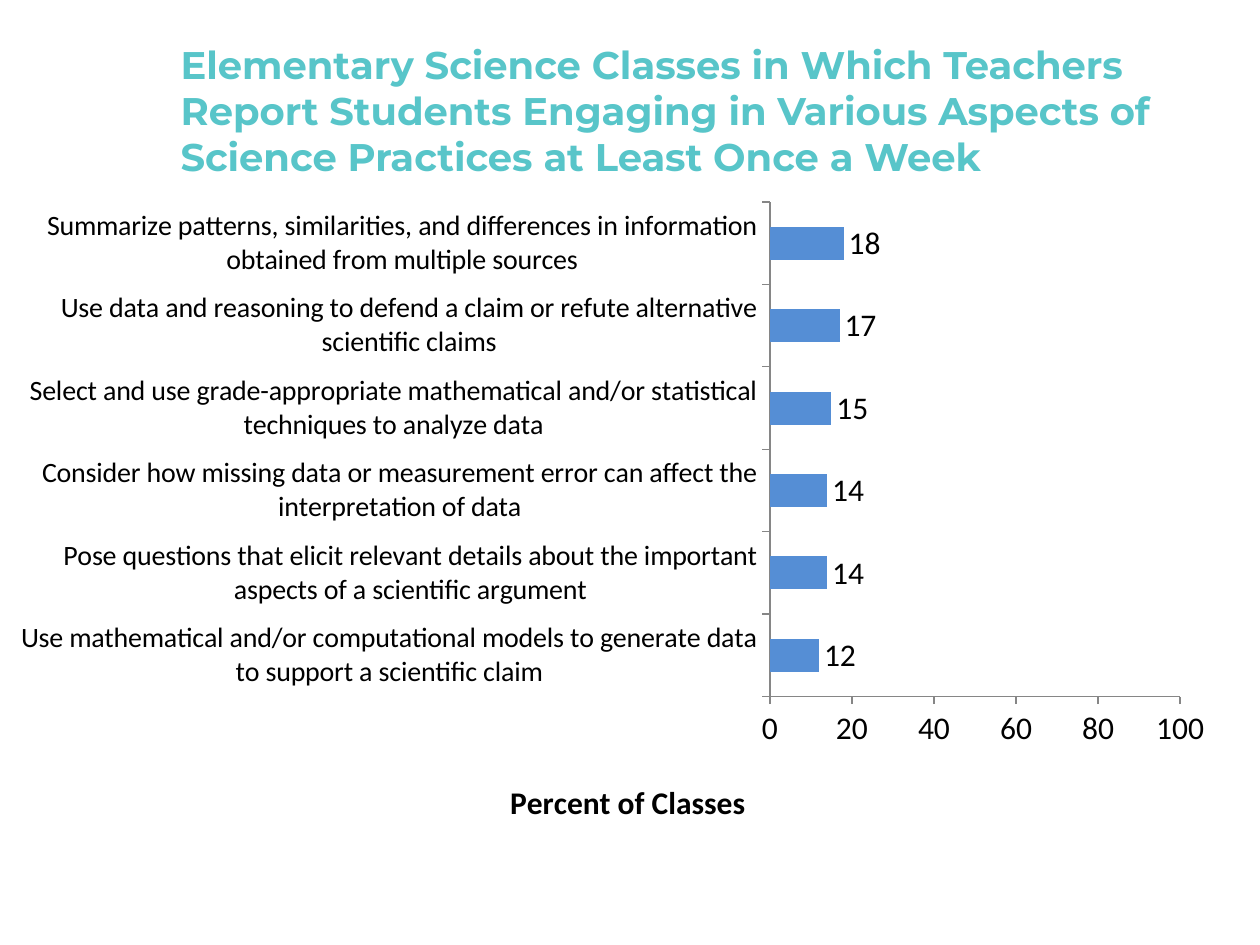
from dataclasses import dataclass

from lxml.etree import SubElement as Sub
from pptx import Presentation as Deck
from pptx.chart.data import CategoryChartData as Data
from pptx.dml.color import RGBColor as Color
from pptx.enum.chart import XL_CHART_TYPE as Kind
from pptx.enum.chart import XL_LABEL_POSITION as Spot
from pptx.enum.chart import XL_TICK_MARK as Tick
from pptx.enum.text import MSO_ANCHOR as Anchor
from pptx.enum.text import MSO_AUTO_SIZE as Fit
from pptx.enum.text import PP_ALIGN as Align
from pptx.oxml.ns import qn
from pptx.util import Pt

TITLE = ("Elementary Science Classes in Which Teachers Report Students "
         "Engaging in Various Aspects of Science Practices at Least Once a Week")
ROWS = [
    ("Use mathematical and/or computational models to generate data "
     "to support a scientific claim", 12),
    ("Pose questions that elicit relevant details about the important "
     "aspects of a scientific argument", 14),
    ("Consider how missing data or measurement error can affect the "
     "interpretation of data", 14),
    ("Select and use grade-appropriate mathematical and/or statistical "
     "techniques to analyze data", 15),
    ("Use data and reasoning to defend a claim or refute alternative "
     "scientific claims", 17),
    ("Summarize patterns, similarities, and differences in information "
     "obtained from multiple sources", 18),
]


@dataclass(frozen=True)
class Theme:
    teal: str = "58C5C9"
    blue: str = "558ED5"
    gray: str = "868686"
    black: str = "000000"
    head: str = "Montserrat"
    body: str = "Calibri"
    title: int = 22
    text: int = 18
    label: int = 16


def style(font, face, size, color, bold=False):
    font.name, font.size, font.bold = face, Pt(size), bold
    font.color.rgb = Color.from_string(color)


def write(frame, text, align=None, **look):
    para = frame.paragraphs[0]
    para.alignment = align
    run = para.add_run()
    run.text = text
    style(run.font, **look)


def place(node, index, **parts):
    for old in node.findall(qn("c:layout")):
        node.remove(old)
    outer = Sub(node, qn("c:layout"))
    node.insert(index, outer)
    inner = Sub(outer, qn("c:manualLayout"))
    for name, value in parts.items():
        Sub(inner, qn(f"c:{name}")).set("val", str(value))


class Page:
    def __init__(self, deck, theme):
        self.theme = theme
        self.slide = deck.slides.add_slide(deck.slide_layouts[5])

    def title(self, text, left, top, width, height):
        box = self.slide.shapes.title
        box.left, box.top = Pt(left), Pt(top)
        box.width, box.height = Pt(width), Pt(height)
        frame = box.text_frame
        frame.word_wrap = True
        frame.auto_size = Fit.NONE
        frame.vertical_anchor = Anchor.MIDDLE
        look = self.theme
        write(frame, text, align=Align.LEFT, face=look.head,
              size=look.title, color=look.teal, bold=True)

    def axis(self, axis, size):
        look = self.theme
        axis.has_major_gridlines = False
        axis.major_tick_mark = Tick.OUTSIDE
        axis.minor_tick_mark = Tick.NONE
        axis.format.line.color.rgb = Color.from_string(look.gray)
        axis.format.line.width = Pt(0.75)
        style(axis.tick_labels.font, look.body, size, look.black)

    def bars(self, rows, name, left, top, width, height):
        look = self.theme
        names, values = zip(*rows)
        data = Data()
        data.categories = names
        data.add_series("Series 1", values)
        chart = self.slide.shapes.add_chart(
            Kind.BAR_CLUSTERED, Pt(left), Pt(top), Pt(width), Pt(height), data).chart
        chart.has_legend = chart.has_title = False
        style(chart.font, look.body, look.text, look.black)

        plot = chart.plots[0]
        plot.gap_width = 150
        plot.vary_by_categories = False
        fill = plot.series[0].format.fill
        fill.solid()
        fill.fore_color.rgb = Color.from_string(look.blue)
        plot.has_data_labels = True
        labels = plot.data_labels
        labels.show_value = True
        labels.position = Spot.OUTSIDE_END
        style(labels.font, look.body, look.text, look.black)

        self.axis(chart.category_axis, look.label)
        scale = chart.value_axis
        self.axis(scale, look.text)
        scale.minimum_scale, scale.maximum_scale = 0, 100
        scale.major_unit = 20
        write(scale.axis_title.text_frame, name, face=look.body,
              size=look.text, color=look.black, bold=True)

        area = chart.element.xpath("c:chart/c:plotArea")[0]
        place(area, 0, layoutTarget="inner", xMode="edge", yMode="edge",
              x=0.62, y=0.02, w=0.34, h=0.76)
        place(area.xpath("c:valAx/c:title")[0], 1,
              xMode="edge", yMode="edge", x=0.4, y=0.9)


def main():
    deck = Deck()
    deck.slide_width, deck.slide_height = Pt(720), Pt(540)
    page = Page(deck, Theme())
    page.bars(ROWS, "Percent of Classes", 12, 108, 690, 372)
    page.title(TITLE, 96, 18, 588, 90)
    deck.save("out.pptx")


if __name__ == "__main__":
    main()
